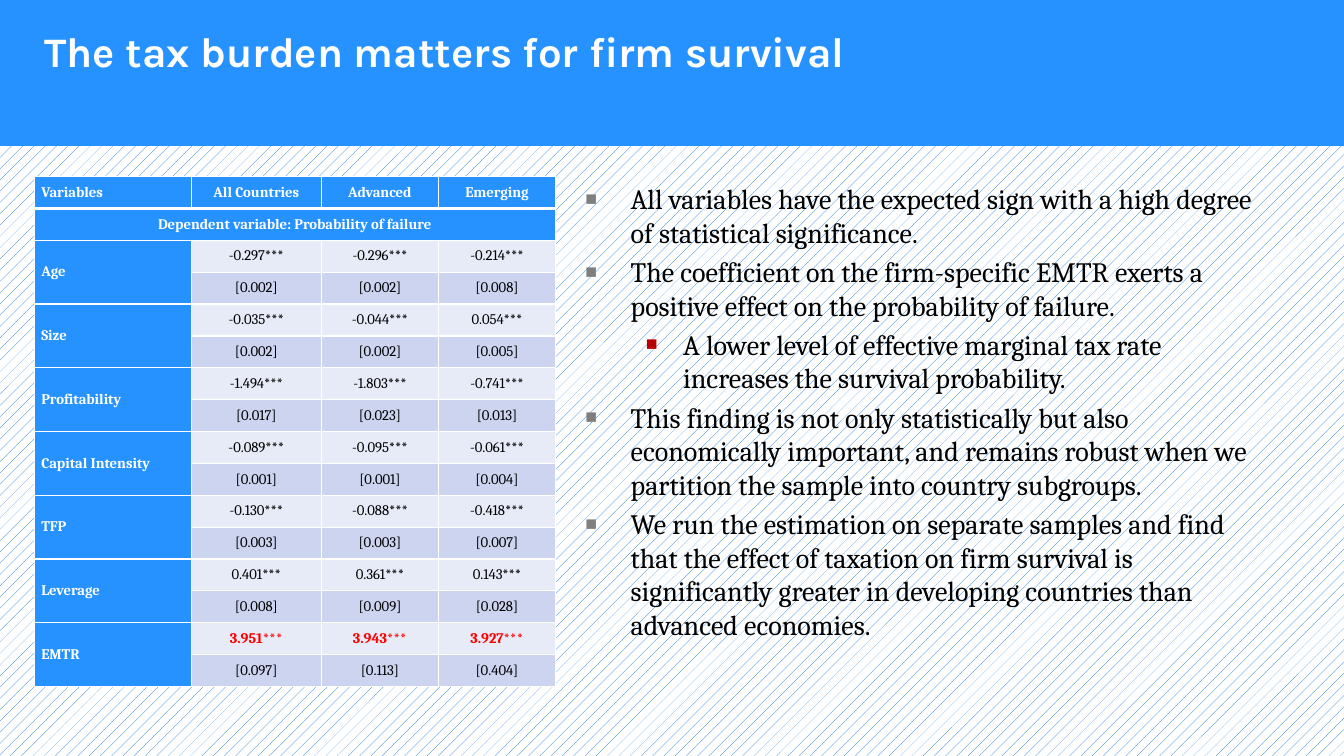
from lxml.etree import SubElement
from pptx import Presentation
from pptx.dml.color import RGBColor
from pptx.enum.dml import MSO_PATTERN
from pptx.enum.shapes import MSO_SHAPE
from pptx.enum.text import MSO_ANCHOR, MSO_AUTO_SIZE, PP_ALIGN
from pptx.oxml.ns import qn
from pptx.util import Cm, Pt

HEADLINE = "The tax burden matters for firm survival"
COLUMNS = ["Variables", "All Countries", "Advanced", "Emerging"]
DEPENDENT = "Dependent variable: Probability of failure"
ESTIMATES = [
    ("Age", ["-0.297***", "-0.296***", "-0.214***"], ["[0.002]", "[0.002]", "[0.008]"]),
    ("Size", ["-0.035***", "-0.044***", "0.054***"], ["[0.002]", "[0.002]", "[0.005]"]),
    ("Profitability", ["-1.494***", "-1.803***", "-0.741***"], ["[0.017]", "[0.023]", "[0.013]"]),
    ("Capital Intensity", ["-0.089***", "-0.095***", "-0.061***"], ["[0.001]", "[0.001]", "[0.004]"]),
    ("TFP", ["-0.130***", "-0.088***", "-0.418***"], ["[0.003]", "[0.003]", "[0.007]"]),
    ("Leverage", ["0.401***", "0.361***", "0.143***"], ["[0.008]", "[0.009]", "[0.028]"]),
    ("EMTR", ["3.951***", "3.943***", "3.927***"], ["[0.097]", "[0.113]", "[0.404]"]),
]
HIGHLIGHTED = "EMTR"
FINDINGS = [
    (0, "All variables have the expected sign with a high degree of statistical significance."),
    (0, "The coefficient on the firm-specific EMTR exerts a positive effect on the probability of failure."),
    (1, "A lower level of effective marginal tax rate increases the survival probability."),
    (0, "This finding is not only statistically but also economically important, "
        "and remains robust when we partition the sample into country subgroups."),
    (0, "We run the estimation on separate samples and find that the effect of taxation on firm survival "
        "is significantly greater in developing countries than advanced economies."),
]
LEVELS = [(Cm(1.14), Cm(-1.14), "7F7F7F"), (Cm(2.46), Cm(-0.94), "B80000")]
COLUMN_WIDTHS = [Cm(3.96), Cm(3.28), Cm(2.95), Cm(2.95)]
BLUE, WHITE, BLACK, RED = "2592FF", "FFFFFF", "000000", "FF0000"
COEFFICIENT_FILL, ERROR_FILL = "E7EBF7", "CCD4F0"


def color(value):
    return RGBColor.from_string(value)


def place(shape, left, top, width, height):
    shape.left, shape.top, shape.width, shape.height = left, top, width, height


def add_text(paragraph, text, size, font, shade, bold=False):
    run = paragraph.add_run()
    run.text = text
    run.font.size, run.font.name, run.font.bold = Pt(size), font, bold
    run.font.color.rgb = color(shade)


def add_bullet(paragraph, level):
    indent, hanging, shade = LEVELS[level]
    properties = paragraph._p.get_or_add_pPr()
    properties.set("marL", str(indent))
    properties.set("indent", str(hanging))
    bullet_color = SubElement(properties, qn("a:buClr"))
    SubElement(bullet_color, qn("a:srgbClr"), val=shade)
    SubElement(properties, qn("a:buSzPct"), val="70000")
    SubElement(properties, qn("a:buChar"), char="■")


def format_cell(cell, fill, top, bottom):
    cell.margin_left = cell.margin_right = Cm(0.18)
    cell.margin_top = cell.margin_bottom = 0
    cell.vertical_anchor = MSO_ANCHOR.MIDDLE
    properties = cell._tc.get_or_add_tcPr()
    for side, points in (("L", 1), ("R", 1), ("T", top), ("B", bottom)):
        border = SubElement(properties, qn("a:ln" + side), w=str(Pt(points)))
        border_fill = SubElement(border, qn("a:solidFill"))
        SubElement(border_fill, qn("a:srgbClr"), val=WHITE)
    cell.fill.solid()
    cell.fill.fore_color.rgb = color(fill)


def add_heading(slide):
    band = slide.shapes.add_shape(MSO_SHAPE.RECTANGLE, 0, 0, Cm(33.87), Cm(3.68))
    band.shadow.inherit = False
    band.fill.solid()
    band.fill.fore_color.rgb = color(BLUE)
    band.line.fill.background()
    slide.shapes._spTree.insert(2, band._element)
    title = slide.shapes.title
    place(title, Cm(0.86), Cm(0.51), Cm(30.48), Cm(3.17))
    title.text_frame.auto_size = MSO_AUTO_SIZE.NONE
    title.text_frame.vertical_anchor = MSO_ANCHOR.TOP
    paragraph = title.text_frame.paragraphs[0]
    paragraph.alignment = PP_ALIGN.LEFT
    add_text(paragraph, HEADLINE, 30, "Karla", WHITE, True)


def add_findings(body):
    place(body, Cm(14.5), Cm(4.45), Cm(17.68), Cm(12.57))
    frame = body.text_frame
    frame.auto_size = MSO_AUTO_SIZE.NONE
    for index, (level, finding) in enumerate(FINDINGS):
        paragraph = frame.add_paragraph() if index else frame.paragraphs[0]
        paragraph.level = level
        paragraph.space_before = Pt(4)
        add_bullet(paragraph, level)
        add_text(paragraph, finding, 20, "Cambria", BLACK)


def add_estimates(slide):
    rows = [COLUMNS, [DEPENDENT, "", "", ""]]
    for variable, coefficients, errors in ESTIMATES:
        rows += [[variable, *coefficients], ["", *errors]]
    height = Cm(12.85)
    table = slide.shapes.add_table(len(rows), len(COLUMNS), Cm(0.86), Cm(4.45),
                                   sum(COLUMN_WIDTHS), height).table
    table.horz_banding = False
    for column, width in zip(table.columns, COLUMN_WIDTHS):
        column.width = width
    for r, values in enumerate(rows):
        table.rows[r].height = height // len(rows)
        for c, value in enumerate(values):
            heading = r < 2 or c == 0
            highlighted = values[0] == HIGHLIGHTED and not heading
            fill = BLUE if heading else ERROR_FILL if r % 2 else COEFFICIENT_FILL
            cell = table.cell(r, c)
            format_cell(cell, fill, 3 if r == 1 else 1, 3 if r == 0 else 1)
            if value:
                paragraph = cell.text_frame.paragraphs[0]
                paragraph.alignment = PP_ALIGN.CENTER if c or r == 1 else PP_ALIGN.LEFT
                shade = WHITE if heading else RED if highlighted else BLACK
                add_text(paragraph, value, 10.5, "Cambria", shade, heading or highlighted)
    table.cell(1, 0).merge(table.cell(1, len(COLUMNS) - 1))
    for r in range(2, len(rows), 2):
        table.cell(r, 0).merge(table.cell(r + 1, 0))


def main():
    presentation = Presentation()
    presentation.slide_width, presentation.slide_height = Cm(33.87), Cm(19.05)
    slide = presentation.slides.add_slide(presentation.slide_layouts[1])
    background = slide.background.fill
    background.patterned()
    background.pattern = MSO_PATTERN.PERCENT_10
    background.fore_color.rgb = color("006BD6")
    background.back_color.rgb = color(WHITE)
    add_heading(slide)
    add_findings(slide.placeholders[1])
    add_estimates(slide)
    presentation.save("out.pptx")


if __name__ == "__main__":
    main()
